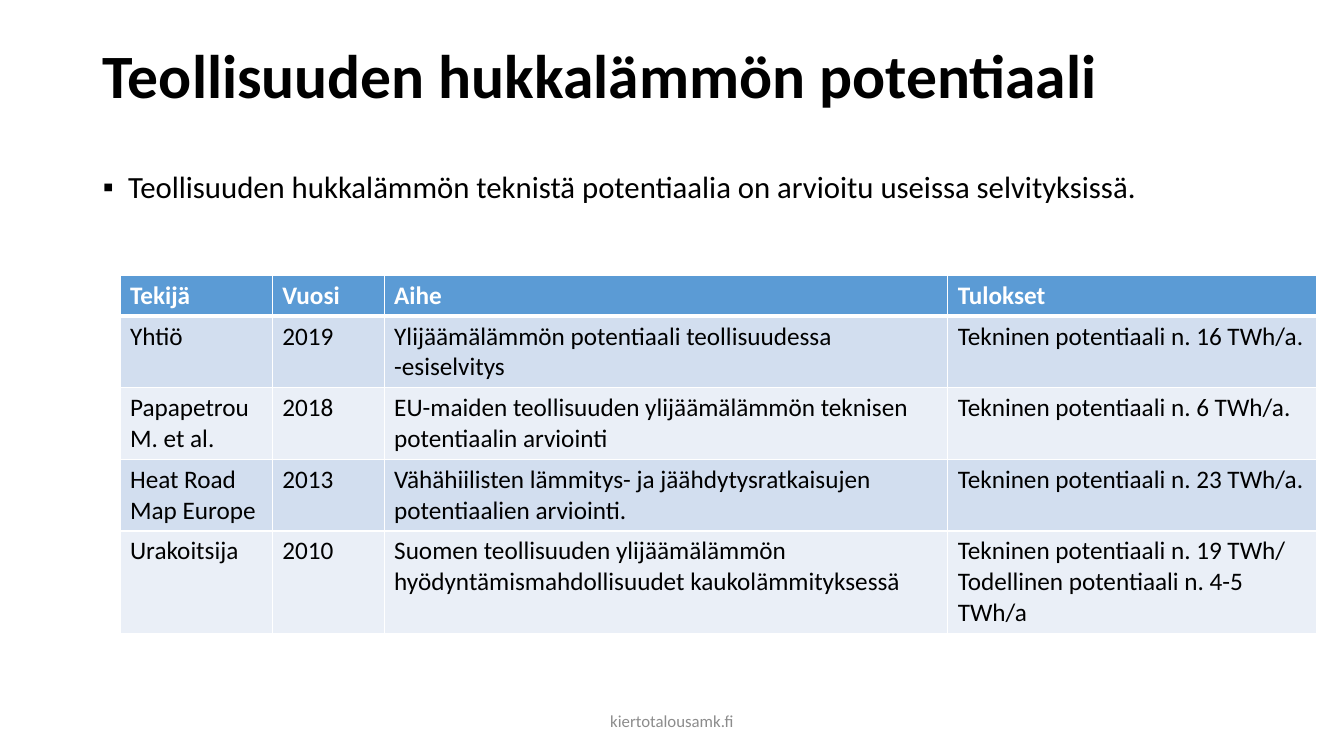
import pptx
import pptx.dml.color
import pptx.enum.text
import pptx.oxml.ns
import pptx.util
from lxml import etree

Inches = pptx.util.Inches
Pt = pptx.util.Pt
Anchor = pptx.enum.text.MSO_ANCHOR
Align = pptx.enum.text.PP_ALIGN

WIDTH, HEIGHT = 13.33, 7.5
MARGIN = 0.92
FONT = "Calibri"
BLACK, WHITE, GREY = "000000", "FFFFFF", "8C8C8C"
HEADER_FILL = "5B9BD5"
BAND_FILLS = ["D2DEEF", "EAEFF7"]

COLUMN_WIDTHS = [1.51, 1.11, 5.59, 3.66]
LINES_PER_ROW = [1, 2, 2, 2, 3]
STUDIES = [
    ["Tekijä", "Vuosi", "Aihe", "Tulokset"],
    ["Yhtiö", "2019", "Ylijäämälämmön potentiaali teollisuudessa -esiselvitys",
     "Tekninen potentiaali n. 16 TWh/a."],
    ["Papapetrou M. et al.", "2018",
     "EU-maiden teollisuuden ylijäämälämmön teknisen potentiaalin arviointi",
     "Tekninen potentiaali n. 6 TWh/a."],
    ["Heat Road Map Europe", "2013",
     "Vähähiilisten lämmitys- ja jäähdytysratkaisujen potentiaalien arviointi.",
     "Tekninen potentiaali n. 23 TWh/a."],
    ["Urakoitsija", "2010",
     "Suomen teollisuuden ylijäämälämmön hyödyntämismahdollisuudet kaukolämmityksessä",
     "Tekninen potentiaali n. 19 TWh/ Todellinen potentiaali n. 4-5 TWh/a"],
]


def color(hex_string):
    return pptx.dml.color.RGBColor.from_string(hex_string)


def place(shape, box):
    shape.left, shape.top, shape.width, shape.height = map(Inches, box)


def write(frame, text, size, hex_string, bold=False):
    """Fill a text frame with one formatted paragraph and return it."""
    frame.text = text
    frame.word_wrap = True
    para = frame.paragraphs[0]
    for span in para.runs:
        span.font.name = FONT
        span.font.size = Pt(size)
        span.font.bold = bold
        span.font.color.rgb = color(hex_string)
    return para


def add_title(page, box):
    title = page.shapes.title
    place(title, box)
    frame = title.text_frame
    para = write(frame, "Teollisuuden hukkalämmön potentiaali", 44, BLACK, True)
    para.alignment = Align.LEFT
    para.line_spacing = 0.9
    frame.vertical_anchor = Anchor.TOP
    frame.auto_size = pptx.enum.text.MSO_AUTO_SIZE.NONE


def add_intro(page, box):
    body = page.placeholders[1]
    place(body, box)
    frame = body.text_frame
    para = write(
        frame,
        "Teollisuuden hukkalämmön teknistä potentiaalia on arvioitu useissa selvityksissä.",
        22, BLACK)
    para.line_spacing = 0.9
    para.space_before = Pt(0)
    frame.auto_size = pptx.enum.text.MSO_AUTO_SIZE.NONE
    # Square bullet with a hanging indent
    properties = para._p.get_or_add_pPr()
    properties.set("marL", str(Inches(0.25)))
    properties.set("indent", str(-Inches(0.25)))
    bullet = etree.SubElement(properties, pptx.oxml.ns.qn("a:buChar"))
    bullet.set("char", "▪")


def add_border(cell, side, points):
    line = etree.SubElement(cell._tc.get_or_add_tcPr(), pptx.oxml.ns.qn("a:ln" + side))
    line.set("w", str(Pt(points)))
    fill = etree.SubElement(line, pptx.oxml.ns.qn("a:solidFill"))
    etree.SubElement(fill, pptx.oxml.ns.qn("a:srgbClr")).set("val", WHITE)


def add_studies(page, left, top):
    heights = [0.1 + 0.3 * lines for lines in LINES_PER_ROW]
    box = (left, top, sum(COLUMN_WIDTHS), sum(heights))
    table = page.shapes.add_table(
        len(STUDIES), len(COLUMN_WIDTHS), *map(Inches, box)).table
    for column, width in zip(table.columns, COLUMN_WIDTHS):
        column.width = Inches(width)
    for index, (row, height, texts) in enumerate(zip(table.rows, heights, STUDIES)):
        row.height = Inches(height)
        header = index == 0
        for cell, text in zip(row.cells, texts):
            write(cell.text_frame, text, 18, WHITE if header else BLACK, header)
            # Thin white grid, with a thick rule below the header
            for side in "LRTB":
                thick = (header and side == "B") or (index == 1 and side == "T")
                add_border(cell, side, 3 if thick else 1)
            cell.fill.solid()
            cell.fill.fore_color.rgb = color(
                HEADER_FILL if header else BAND_FILLS[(index - 1) % 2])


def add_footer(page, box):
    footer = page.shapes.add_textbox(*map(Inches, box))
    para = write(footer.text_frame, "kiertotalousamk.fi", 12, GREY)
    para.alignment = Align.CENTER
    footer.text_frame.vertical_anchor = Anchor.MIDDLE


def main():
    deck = pptx.Presentation()
    deck.slide_width = Inches(WIDTH)
    deck.slide_height = Inches(HEIGHT)
    page = deck.slides.add_slide(deck.slide_layouts[1])
    add_title(page, (MARGIN, 0.4, WIDTH - 2 * MARGIN, 1.2))
    add_intro(page, (MARGIN, 1.66, WIDTH - MARGIN, 0.43))
    add_studies(page, 1.19, 2.73)
    add_footer(page, ((WIDTH - 4.5) / 2, 6.95, 4.5, 0.4))
    deck.save("out.pptx")


if __name__ == "__main__":
    main()
